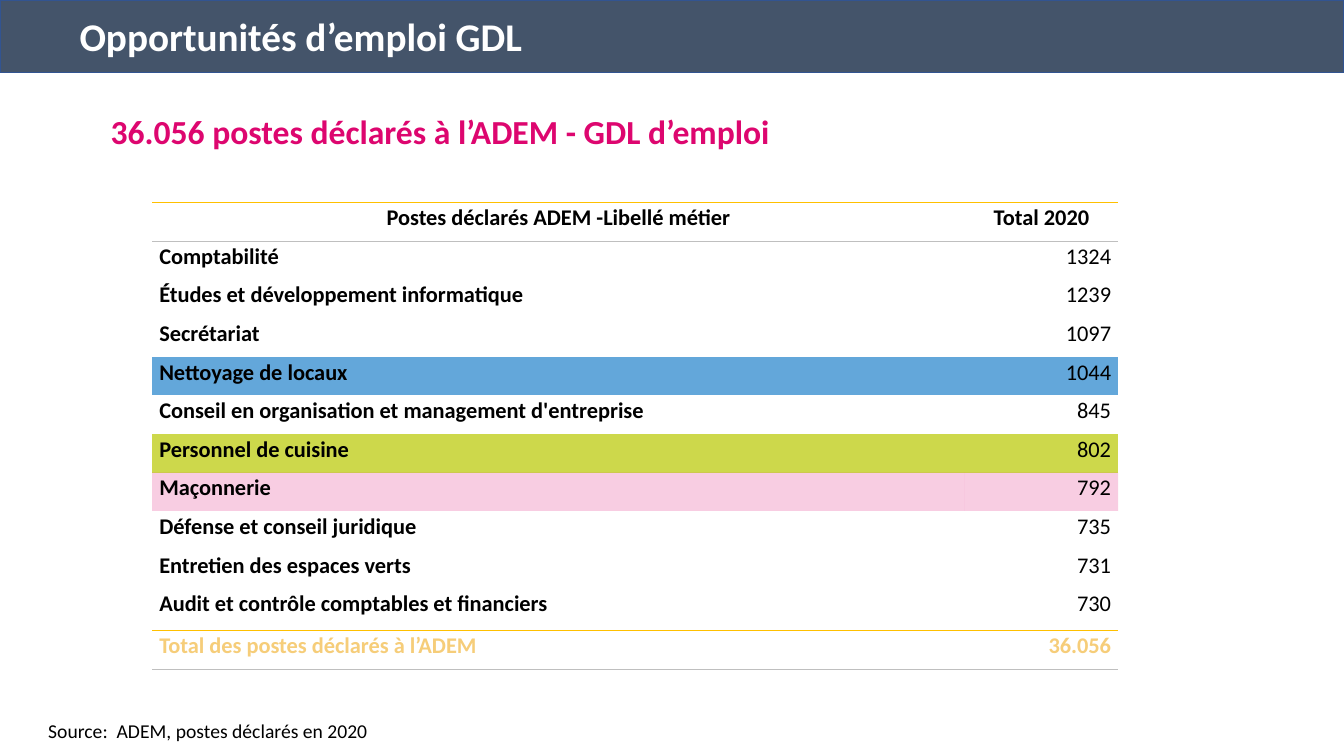
from lxml.etree import SubElement
from pptx import Presentation
from pptx.dml.color import RGBColor
from pptx.enum.shapes import MSO_SHAPE as SHAPE
from pptx.enum.text import MSO_AUTO_SIZE as AUTO, PP_ALIGN as ALIGN
from pptx.oxml.ns import qn
from pptx.util import Inches, Pt

NO_GRID_STYLE = "{2D5ABB26-0587-4C30-8999-92F81FD0307C}"
MAGENTA, YELLOW, GREY = "DD066F", "FFC000", "BFBFBF"

JOBS = [
    ("Comptabilité", "1324", "FFFFFF"),
    ("Études et développement informatique", "1239", "FFFFFF"),
    ("Secrétariat", "1097", "FFFFFF"),
    ("Nettoyage de locaux", "1044", "63A7DA"),
    ("Conseil en organisation et management d'entreprise", "845", "FFFFFF"),
    ("Personnel de cuisine", "802", "CDD84B"),
    ("Maçonnerie", "792", MAGENTA),
    ("Défense et conseil juridique", "735", "FFFFFF"),
    ("Entretien des espaces verts", "731", "FFFFFF"),
    ("Audit et contrôle comptables et financiers", "730", None),
]


def rgb(color):
    return RGBColor.from_string(color)


def style(p, size, color, bold=False):
    p.font.name = "Calibri"
    p.font.size = Pt(size)
    p.font.bold = bold
    p.font.color.rgb = rgb(color)


def add_text(s, box, text, size, color, bold=False):
    sp = s.shapes.add_textbox(*map(Inches, box))
    tf = sp.text_frame
    tf.word_wrap = True
    tf.auto_size = AUTO.SHAPE_TO_FIT_TEXT
    p = tf.paragraphs[0]
    p.text = text
    style(p, size, color, bold)


def add_banner(s, box, title):
    left, top, width, height = box
    sp = s.shapes.add_shape(SHAPE.RECTANGLE, *map(Inches, box))
    sp.shadow.inherit = False
    sp.fill.solid()
    sp.fill.fore_color.rgb = rgb("44546A")
    sp.line.color.rgb = rgb("325491")
    sp.line.width = Pt(1)
    add_text(s, (left + 0.69, top + 0.07, 5.42, 0.57), title, 28, "FFFFFF", True)


def add_border(cell, side, color):
    ln = SubElement(cell._tc.get_or_add_tcPr(), qn(f"a:{side}"), w=str(Pt(1)))
    fill = SubElement(ln, qn("a:solidFill"))
    SubElement(fill, qn("a:srgbClr"), val=color)


def fill_cell(cell, color):
    if color is None:
        cell.fill.background()
        return
    cell.fill.solid()
    cell.fill.fore_color.rgb = rgb(color)
    if color == MAGENTA:
        clr = cell._tc.tcPr.find(".//" + qn("a:srgbClr"))
        SubElement(clr, qn("a:alpha"), val="20000")


def set_cell(cell, text, align, color, bold, fill, ruled):
    cell.margin_left = cell.margin_right = Inches(0.07)
    cell.margin_top = cell.margin_bottom = 0
    p = cell.text_frame.paragraphs[0]
    p.text = text
    p.alignment = align
    p.line_spacing = 1.07
    p.space_after = Pt(8)
    style(p, 16, color, bold)
    if ruled:
        add_border(cell, "lnT", YELLOW)
        add_border(cell, "lnB", GREY)
    fill_cell(cell, fill)


def add_jobs_table(s, box):
    header = ("Postes déclarés ADEM -Libellé métier", "Total 2020", None)
    total = ("Total des postes déclarés à l’ADEM", "36.056", None)
    rows = [header, *JOBS, total]
    table = s.shapes.add_table(len(rows), 2, *map(Inches, box)).table
    table.first_row = table.horz_banding = False
    table._tbl.tblPr.find(qn("a:tableStyleId")).text = NO_GRID_STYLE
    table.columns[0].width = Inches(8.06)
    table.columns[1].width = Inches(box[2] - 8.06)
    for i, (job, count, fill) in enumerate(rows):
        table.rows[i].height = Inches(0.42 if i == len(JOBS) else 0.383)
        ruled = i in (0, len(rows) - 1)
        color = "F6CD79" if i == len(rows) - 1 else "000000"
        aligns = (ALIGN.LEFT, ALIGN.RIGHT) if i else (ALIGN.CENTER, ALIGN.CENTER)
        set_cell(table.cell(i, 0), job, aligns[0], color, True, fill, ruled)
        set_cell(table.cell(i, 1), count, aligns[1], color, ruled, fill, ruled)


def main():
    prs = Presentation()
    prs.slide_width, prs.slide_height = Inches(13.33), Inches(7.5)
    s = prs.slides.add_slide(prs.slide_layouts[6])
    add_banner(s, (0, 0, 13.33, 0.72), "Opportunités d’emploi GDL")
    add_text(s, (0.38, 7.08, 4.99, 0.4),
             "Source:  ADEM, postes déclarés en 2020", 14, "000000")
    add_jobs_table(s, (1.51, 2.01, 9.58, 4.63))
    add_text(s, (1, 1.05, 11.93, 0.5),
             "36.056 postes déclarés à l’ADEM - GDL d’emploi", 24, MAGENTA, True)
    prs.save("out.pptx")


if __name__ == "__main__":
    main()
